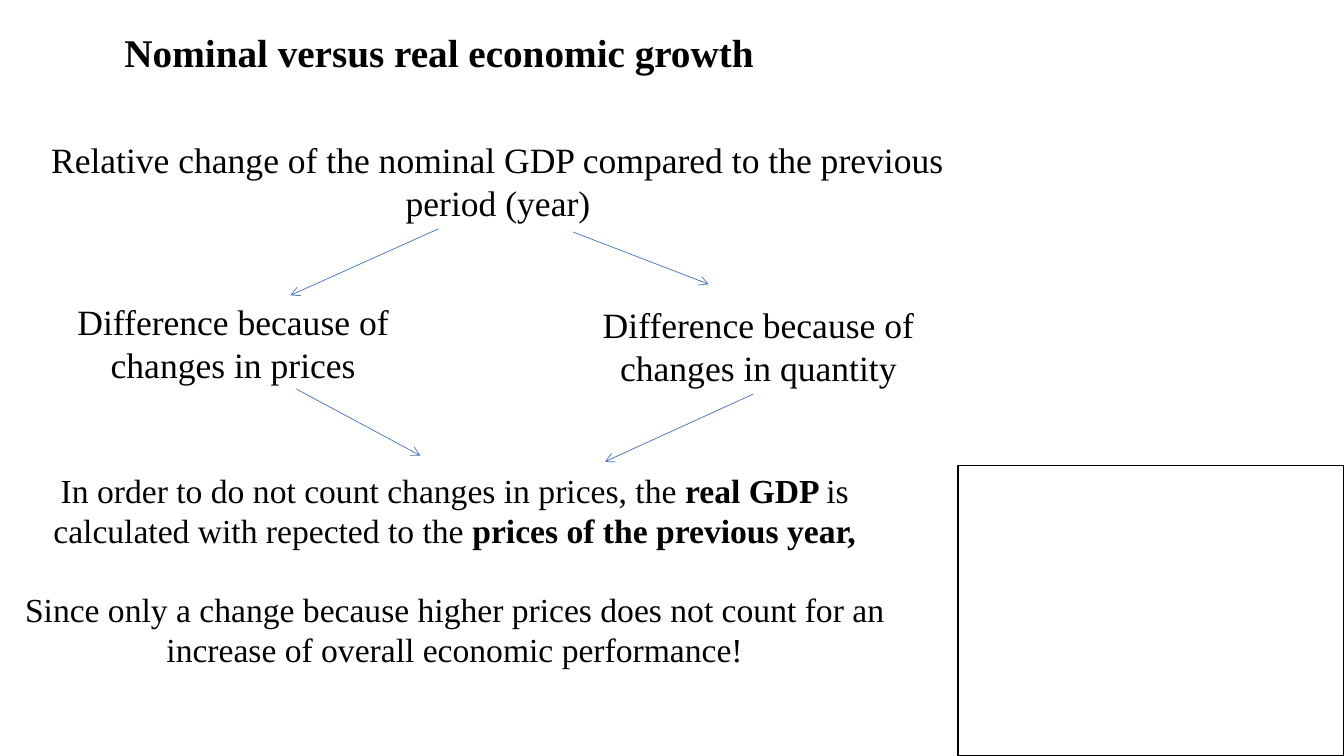
from pptx import Presentation
from pptx.dml.color import RGBColor
from pptx.enum.shapes import MSO_CONNECTOR as Link, MSO_SHAPE as Shape
from pptx.enum.text import MSO_ANCHOR as Anchor, MSO_AUTO_SIZE as Fit, PP_ALIGN as Align
from pptx.oxml.ns import qn
from pptx.util import Inches, Pt
from lxml.etree import SubElement

COLORS = {"text": "000000", "arrow": "4472C4", "frame": "000000"}
FONT = "Times New Roman"


def color(name):
    return RGBColor.from_string(COLORS[name])


def style(para, size, bold=None):
    para.alignment = Align.CENTER
    font = para.font
    font.name, font.size, font.bold = FONT, Pt(size), bold
    font.color.rgb = color("text")


def add_title(slide, text, place):
    title = slide.shapes.title
    title.left, title.top, title.width, title.height = map(Inches, place)
    frame = title.text_frame
    frame.text = text
    frame.auto_size = Fit.NONE
    frame.vertical_anchor = Anchor.MIDDLE
    style(frame.paragraphs[0], 28, True)


def add_text(slide, place, size, *paras):
    """Each paragraph is a list of (text, bold) runs."""
    frame = slide.shapes.add_textbox(*map(Inches, place)).text_frame
    frame.word_wrap = True
    frame.margin_left = frame.margin_right = Inches(0.15)
    for i, runs in enumerate(paras):
        para = frame.add_paragraph() if i else frame.paragraphs[0]
        style(para, size)
        if i:
            para.space_before = Pt(27.6)
        for text, bold in runs:
            run = para.add_run()
            run.text = text
            if bold:
                run.font.bold = True


def add_arrow(slide, start, end):
    arrow = slide.shapes.add_connector(Link.STRAIGHT, *map(Inches, start + end))
    arrow.line.color.rgb = color("arrow")
    arrow.line.width = Pt(0.5)
    SubElement(arrow.line._get_or_add_ln(), qn("a:tailEnd"), type="arrow")
    SubElement(arrow._element.spPr, qn("a:effectLst"))


def add_frame(slide, place):
    box = slide.shapes.add_shape(Shape.RECTANGLE, *map(Inches, place))
    box.shadow.inherit = False
    box.fill.background()
    box.line.color.rgb = color("frame")
    box.line.width = Pt(1)


def main():
    prs = Presentation()
    prs.slide_width, prs.slide_height = Inches(13.33), Inches(7.5)
    slide = prs.slides.add_slide(prs.slide_layouts[5])
    add_title(slide, "Nominal versus real economic growth", (0.11, 0.11, 8.49, 0.81))

    # Nominal change and its two causes
    for text, place in (
        ("Relative change of the nominal GDP compared to the previous period (year)",
         (0.02, 1.32, 9.84, 0.95)),
        ("Difference because of changes in prices", (0.1, 2.93, 4.43, 0.95)),
        ("Difference because of changes in quantity", (5.31, 2.96, 4.43, 0.95)),
    ):
        add_text(slide, place, 25.4, [(text, False)])

    # Conclusion
    add_text(
        slide, (0.02, 4.61, 8.98, 2.11), 24,
        [("In order to do not count changes in prices, the ", False),
         ("real GDP ", True),
         ("is calculated with repected to the ", False),
         ("prices of the previous year,", True)],
        [("Since only a change because higher prices does not count for an "
          "increase of overall economic performance!", False)],
    )

    # Arrows between the steps
    for start, end in (
        ((4.35, 2.27), (2.88, 2.93)),
        ((5.68, 2.3), (7.03, 2.82)),
        ((7.47, 3.91), (6, 4.58)),
        ((2.94, 3.86), (4.17, 4.52)),
    ):
        add_arrow(slide, start, end)

    # Empty frame in the corner
    add_frame(slide, (9.5, 4.62, 3.83, 2.88))
    prs.save("out.pptx")


if __name__ == "__main__":
    main()
